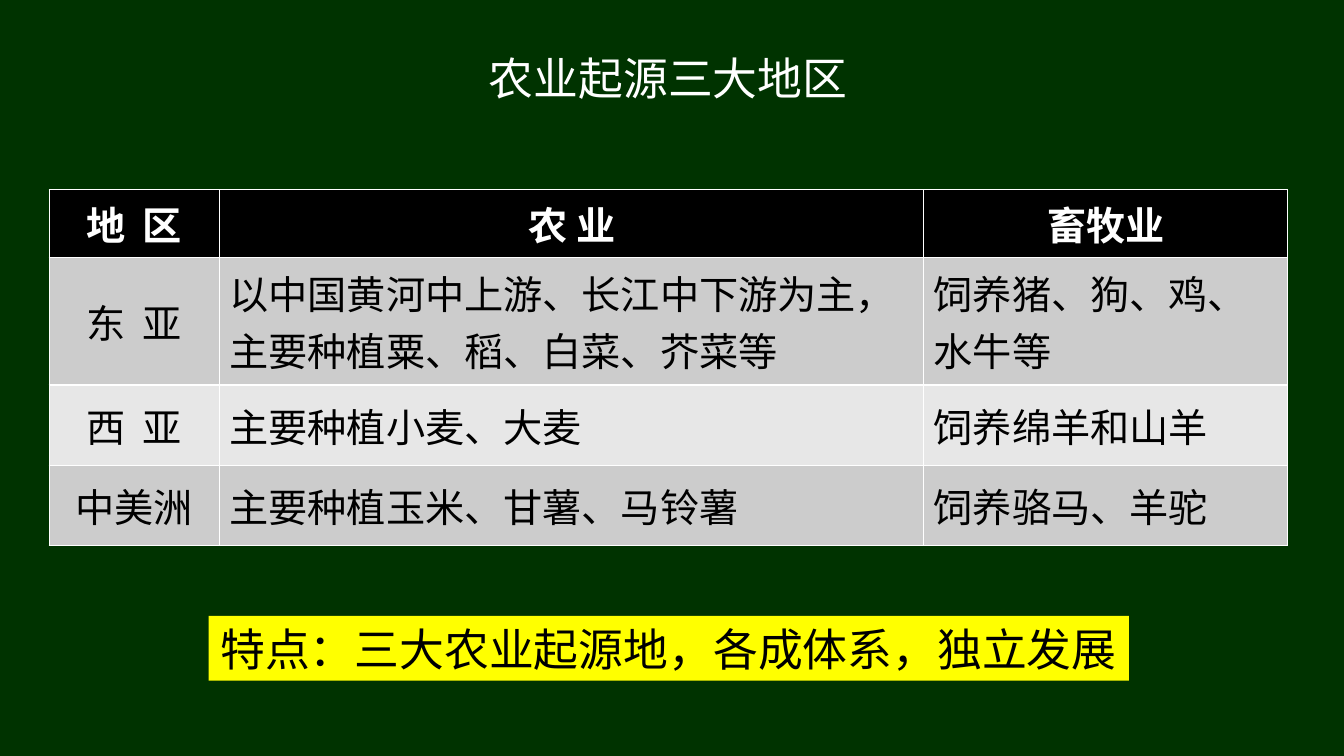
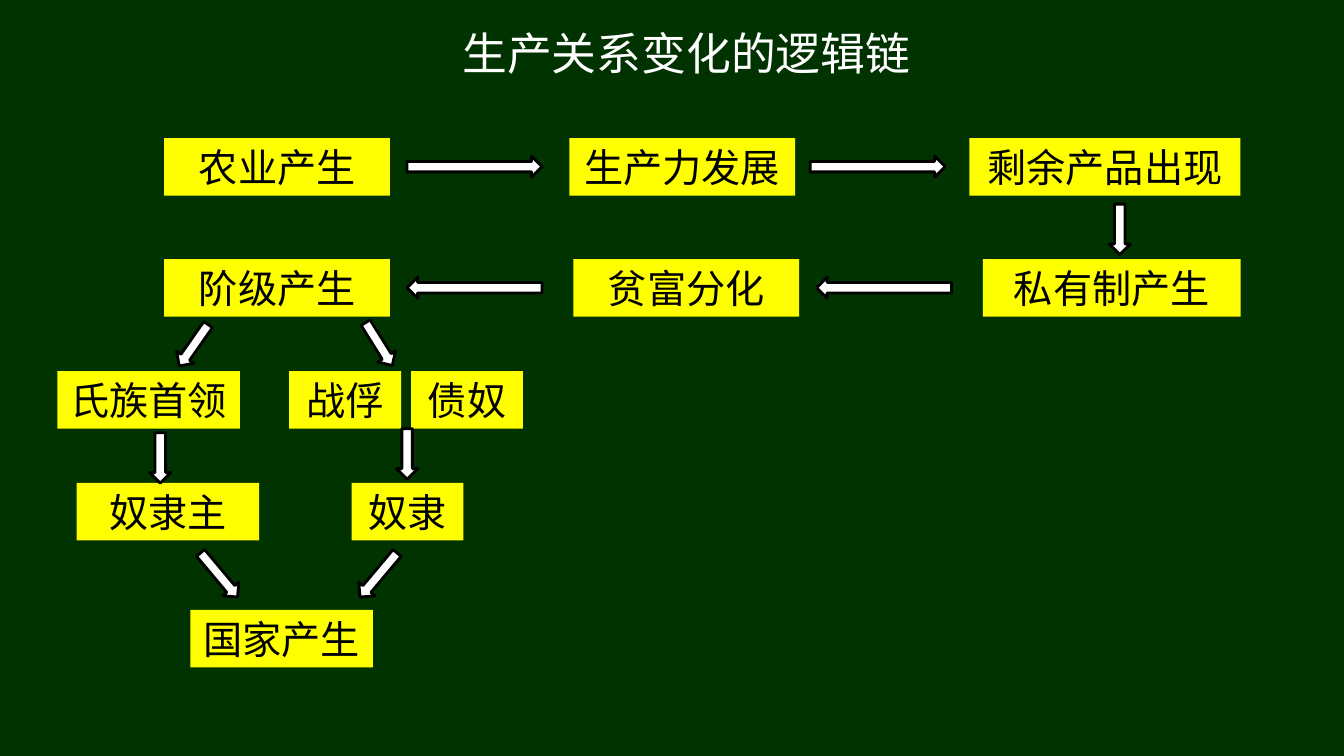
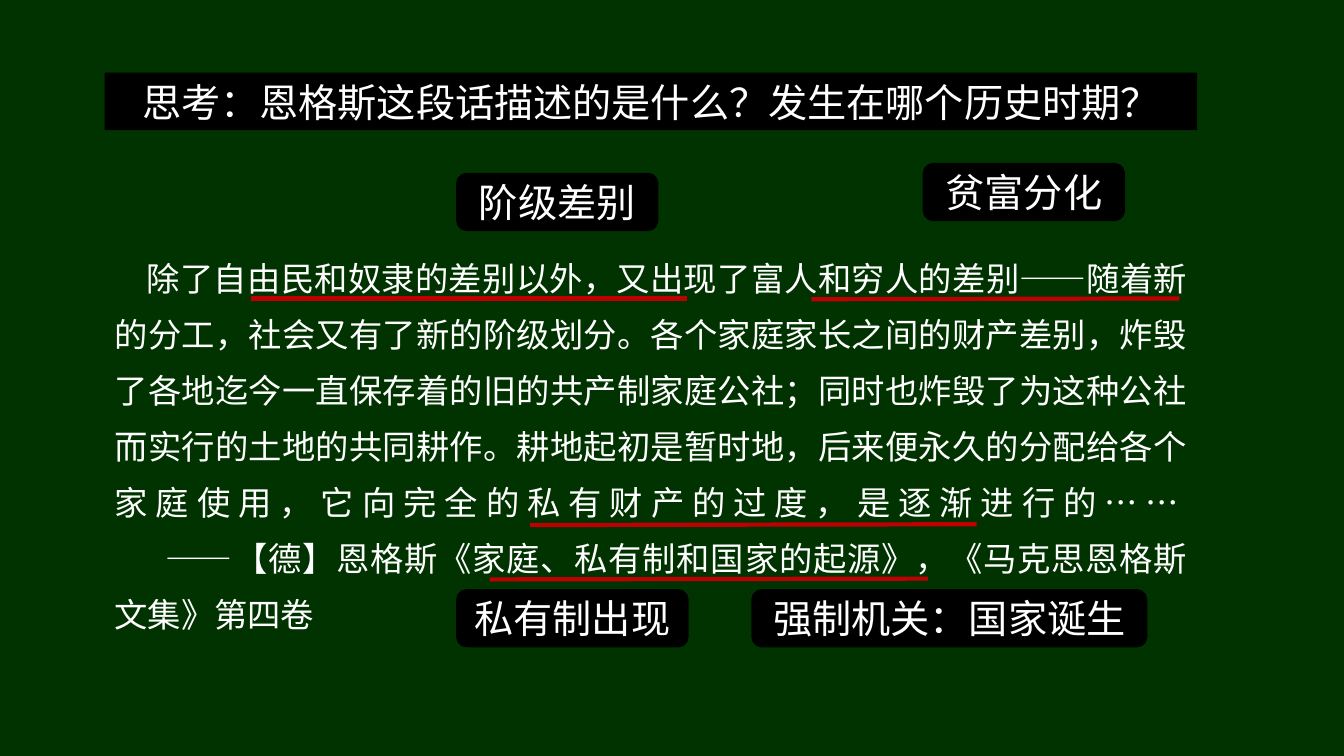
"""Build three history slides on the origins of farming and the state."""
from lxml.etree import SubElement
from pptx import Presentation
from pptx.dml.color import RGBColor
from pptx.enum.shapes import MSO_CONNECTOR, MSO_SHAPE
from pptx.enum.text import MSO_ANCHOR, MSO_AUTO_SIZE, PP_ALIGN
from pptx.oxml.ns import qn
from pptx.util import Cm, Pt

FONT = "Noto Sans CJK SC"
GREEN, YELLOW, RED = "003300", "FFFF00", "C00000"
BLACK, WHITE = "000000", "FFFFFF"
BANDS = ("CCCCCC", "E7E7E7")

REGION_TITLE = ("农业起源三大地区", (11.38, 1.09, 10.92, 1.88))
REGION_ROWS = [
    ("地 区", "农 业", "畜牧业"),
    ("东 亚", "以中国黄河中上游、长江中下游为主，主要种植粟、稻、白菜、芥菜等", "饲养猪、狗、鸡、水牛等"),
    ("西 亚", "主要种植小麦、大麦", "饲养绵羊和山羊"),
    ("中美洲", "主要种植玉米、甘薯、马铃薯", "饲养骆马、羊驼"),
]
COL_WIDTHS = (4.29, 17.75, 9.17)
ROW_HEIGHTS = (1.7, 3.22, 2.02, 2.02)
FEATURE = ("特点：三大农业起源地，各成体系，独立发展", (5.26, 15.52, 23.19, 1.63))

CHAIN_TITLE = ("生产关系变化的逻辑链", (7.29, 0.48, 20.02, 1.88))
STEP_HEIGHT, ARROW_HEIGHT = 1.45, 0.53
STEP_ROWS = [
    (3.48, [("农业产生", 4.14, 5.69), ("生产力发展", 14.35, 5.69), ("剩余产品出现", 24.43, 6.83)]),
    (6.53, [("阶级产生", 4.14, 5.69), ("贫富分化", 14.45, 5.69), ("私有制产生", 24.77, 6.5)]),
    (9.35, [("氏族首领", 1.45, 4.6), ("战俘", 7.29, 2.82), ("债奴", 10.36, 2.82)]),
    (12.17, [("奴隶主", 1.93, 4.6), ("奴隶", 8.86, 2.82)]),
    (15.37, [("国家产生", 4.8, 4.6)]),
]
ARROWS = [
    (11.96, 4.2, 3.4, 0), (22.12, 4.2, 3.4, 0), (28.22, 5.78, 1.27, 90),
    (22.28, 7.25, 3.4, 180), (11.96, 7.25, 3.4, 180),
    (4.88, 8.7, 1.27, 125), (9.55, 8.67, 1.27, 58),
    (4.04, 11.54, 1.27, 90), (10.26, 11.44, 1.27, 90),
    (5.52, 14.49, 1.45, 50), (9.54, 14.49, 1.45, 130),
]

QUESTION = ("思考：恩格斯这段话描述的是什么？发生在哪个历史时期？", (2.64, 1.83, 27.53, 1.45))
PASSAGE = (
    "除了自由民和奴隶的差别以外，又出现了富人和穷人的差别——随着新的分工，"
    "社会又有了新的阶级划分。各个家庭家长之间的财产差别，炸毁了各地迄今一直保存着的"
    "旧的共产制家庭公社；同时也炸毁了为这种公社而实行的土地的共同耕作。"
    "耕地起初是暂时地，后来便永久的分配给各个家庭使用，"
    "它向完全的私有财产的过度，是逐渐进行的……\v"
    "\t——【德】恩格斯《家庭、私有制和国家的起源》，《马克思恩格斯文集》第四卷"
)
PASSAGE_BOX = (2.64, 5.97, 27.53, 10.16)
FIRST_INDENT, SOURCE_TAB = 0.81, 1.66
TAG_HEIGHT = 1.4
TAGS = [("阶级差别", 11.53, 4.39, 5.03), ("贫富分化", 23.29, 4.14, 5.03),
        ("私有制出现", 11.53, 14.88, 5.79), ("强制机关：国家诞生", 18.97, 14.88, 9.91)]
UNDERLINES = [(6.32, 7.52, 17.32, 7.52), (20.45, 7.54, 29.72, 7.52),
              (13.36, 13.23, 24.61, 13.21), (12.34, 14.6, 23.39, 14.58)]


def rgb(value):
    return RGBColor.from_string(value)


def cms(values):
    return [Cm(v) for v in values]


def write(tf, text, size, color, align=PP_ALIGN.CENTER, bold=False, **frame):
    for name, value in {"word_wrap": True, "vertical_anchor": MSO_ANCHOR.MIDDLE, **frame}.items():
        setattr(tf, name, value)
    p = tf.paragraphs[0]
    p.text = text
    p.alignment = align
    for r in p.runs:
        for name, value in {"name": FONT, "size": Pt(size), "bold": bold}.items():
            setattr(r.font, name, value)
        r.font.color.rgb = rgb(color)
        SubElement(r.font._element, qn("a:ea")).set("typeface", FONT)
    return p


def add_block(s, kind, box, fill, line=None):
    sp = s.shapes.add_shape(kind, *cms(box))
    sp.shadow.inherit = False
    sp.fill.solid()
    sp.fill.fore_color.rgb = rgb(fill)
    if line:
        sp.line.color.rgb = rgb(line)
        sp.line.width = Pt(2)
    else:
        sp.line.fill.background()
    return sp


def add_label(s, text, box, fill, color, size=28, **frame):
    sp = add_block(s, MSO_SHAPE.RECTANGLE, box, fill)
    write(sp.text_frame, text, size, color, auto_size=MSO_AUTO_SIZE.SHAPE_TO_FIT_TEXT, **frame)


def add_title(s, text, box):
    tf = s.shapes.add_textbox(*cms(box)).text_frame
    write(tf, text, 32, WHITE).line_spacing = 0.9


def add_regions(s):
    box = (1.24, 4.78, sum(COL_WIDTHS), sum(ROW_HEIGHTS))
    table = s.shapes.add_table(len(REGION_ROWS), len(COL_WIDTHS), *cms(box)).table
    for col, width in zip(table.columns, COL_WIDTHS):
        col.width = Cm(width)
    for i, (row, height, texts) in enumerate(zip(table.rows, ROW_HEIGHTS, REGION_ROWS)):
        row.height = Cm(height)
        head = i == 0
        for j, (cell, text) in enumerate(zip(row.cells, texts)):
            cell.vertical_anchor = MSO_ANCHOR.MIDDLE
            cell.fill.solid()
            cell.fill.fore_color.rgb = rgb(BLACK if head else BANDS[(i - 1) % 2])
            align = PP_ALIGN.CENTER if head or j == 0 else PP_ALIGN.LEFT
            p = write(cell.text_frame, text, 28, WHITE if head else BLACK, align, head)
            if j == 0 and " " in text:
                p.runs[0].font._element.set("spc", "300")


def add_passage(s):
    tf = s.shapes.add_textbox(*cms(PASSAGE_BOX)).text_frame
    p = write(tf, PASSAGE, 23.8, WHITE, PP_ALIGN.JUSTIFY, vertical_anchor=MSO_ANCHOR.TOP)
    p.line_spacing = Pt(40)
    pPr = p._p.get_or_add_pPr()
    pPr.set("marL", "0")
    pPr.set("indent", str(Cm(FIRST_INDENT)))
    tab = SubElement(SubElement(pPr, qn("a:tabLst")), qn("a:tab"))
    tab.set("pos", str(Cm(SOURCE_TAB)))
    tab.set("algn", "l")


def add_underline(s, ends):
    line = s.shapes.add_connector(MSO_CONNECTOR.STRAIGHT, *cms(ends))
    line.line.color.rgb = rgb(RED)
    line.line.width = Pt(3)
    SubElement(line._element.spPr, qn("a:effectLst"))


def build_regions(s):
    add_title(s, *REGION_TITLE)
    add_regions(s)
    add_label(s, *FEATURE, YELLOW, BLACK, 32, word_wrap=False)


def build_chain(s):
    add_title(s, *CHAIN_TITLE)
    for top, steps in STEP_ROWS:
        for text, left, width in steps:
            add_label(s, text, (left, top, width, STEP_HEIGHT), YELLOW, BLACK)
    for x, y, length, angle in ARROWS:
        box = (x - length / 2, y - ARROW_HEIGHT / 2, length, ARROW_HEIGHT)
        add_block(s, MSO_SHAPE.RIGHT_ARROW, box, WHITE, BLACK).rotation = angle


def build_reading(s):
    add_passage(s)
    for ends in UNDERLINES:
        add_underline(s, ends)
    for text, left, top, width in TAGS:
        sp = add_block(s, MSO_SHAPE.ROUNDED_RECTANGLE, (left, top, width, TAG_HEIGHT), BLACK, BLACK)
        write(sp.text_frame, text, 28, WHITE)
    add_label(s, *QUESTION, BLACK, WHITE)


def main():
    prs = Presentation()
    prs.slide_width, prs.slide_height = Cm(33.87), Cm(19.05)
    fill = prs.slide_master.background.fill
    fill.solid()
    fill.fore_color.rgb = rgb(GREEN)
    for build in (build_regions, build_chain, build_reading):
        build(prs.slides.add_slide(prs.slide_layouts[6]))
    prs.save("out.pptx")


if __name__ == "__main__":
    main()
